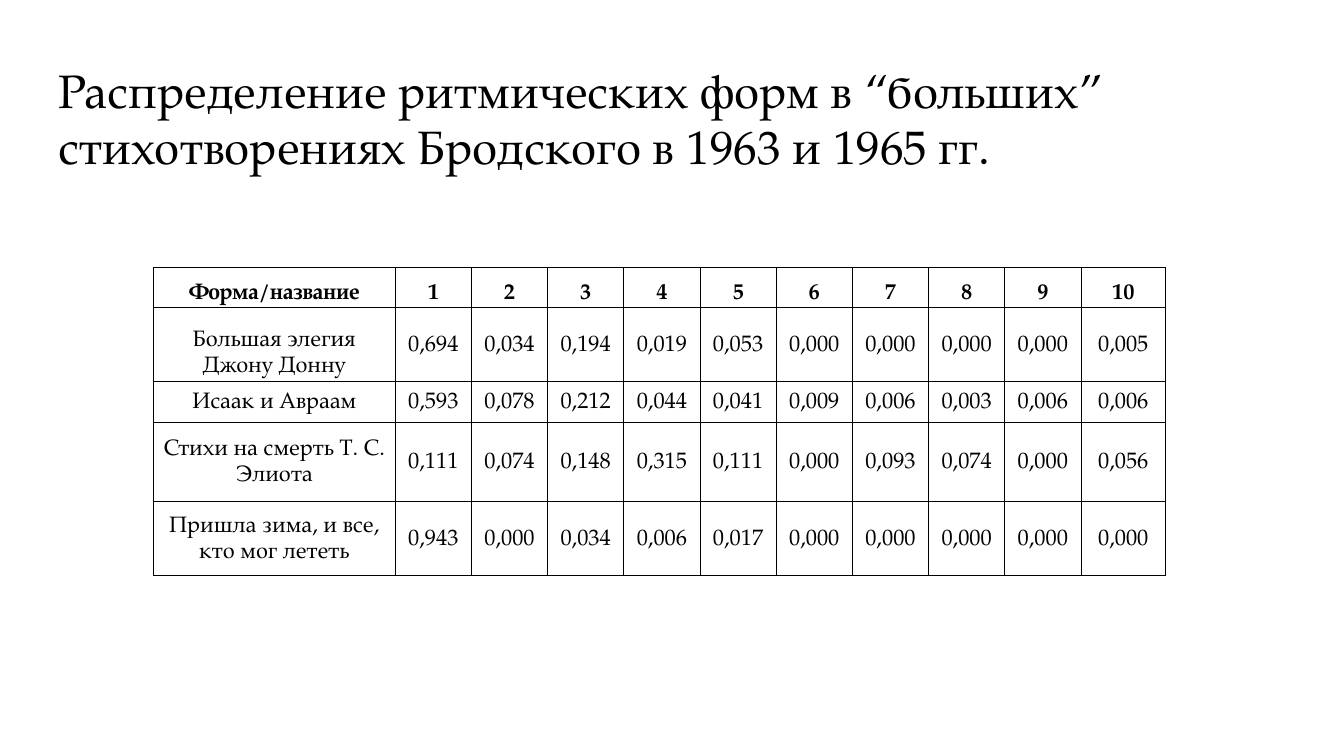
"""Build a slide with a table of rhythmic form frequencies in long poems."""
from dataclasses import dataclass

import lxml.etree
import pptx
import pptx.dml.color
import pptx.enum.text
import pptx.oxml.ns
import pptx.slide
import pptx.table
import pptx.text.text
import pptx.util
from pptx.enum.text import MSO_ANCHOR, PP_ALIGN
from pptx.util import Cm, Pt

BLACK = pptx.dml.color.RGBColor(0, 0, 0)
FONT = "TeX Gyre Pagella"
TITLE = "Распределение ритмических форм в “больших” стихотворениях Бродского в 1963 и 1965 гг."
COLUMN_WIDTHS = [4.57] + [1.44] * 9 + [1.6]


@dataclass(frozen=True)
class TableRow:
    label: str
    values: str
    height: float
    label_anchor: MSO_ANCHOR = MSO_ANCHOR.MIDDLE
    value_anchor: MSO_ANCHOR = MSO_ANCHOR.MIDDLE
    bold: bool = False


ROWS = [
    TableRow("Форма/название", "1 2 3 4 5 6 7 8 9 10", 0.76,
             MSO_ANCHOR.BOTTOM, MSO_ANCHOR.BOTTOM, True),
    TableRow("Большая элегия Джону Донну",
             "0,694 0,034 0,194 0,019 0,053 0,000 0,000 0,000 0,000 0,005", 1.4,
             MSO_ANCHOR.BOTTOM),
    TableRow("Исаак и Авраам",
             "0,593 0,078 0,212 0,044 0,041 0,009 0,006 0,003 0,006 0,006", 0.76),
    TableRow("Стихи на смерть Т. С. Элиота",
             "0,111 0,074 0,148 0,315 0,111 0,000 0,093 0,074 0,000 0,056", 1.5),
    TableRow("Пришла зима, и все, кто мог лететь",
             "0,943 0,000 0,034 0,006 0,017 0,000 0,000 0,000 0,000 0,000", 1.4),
]


def add_run(paragraph: pptx.text.text._Paragraph, text: str, size: float,
            bold: bool = False) -> None:
    run = paragraph.add_run()
    run.text = text
    run.font.name = FONT
    run.font.size = Pt(size)
    run.font.bold = bold
    run.font.color.rgb = BLACK


def add_borders(cell: pptx.table._Cell) -> None:
    properties = cell._tc.get_or_add_tcPr()
    for position, side in enumerate(("lnL", "lnR", "lnT", "lnB")):
        line = lxml.etree.Element(pptx.oxml.ns.qn(f"a:{side}"), w=str(Pt(0.6)))
        fill = lxml.etree.SubElement(line, pptx.oxml.ns.qn("a:solidFill"))
        lxml.etree.SubElement(fill, pptx.oxml.ns.qn("a:srgbClr"), val=str(BLACK))
        properties.insert(position, line)


def fill_cell(cell: pptx.table._Cell, text: str, anchor: MSO_ANCHOR, bold: bool) -> None:
    cell.fill.background()
    add_borders(cell)
    cell.vertical_anchor = anchor
    cell.margin_left = cell.margin_right = Cm(0.08)
    cell.margin_top = cell.margin_bottom = Cm(0.05)
    paragraph = cell.text_frame.paragraphs[0]
    paragraph.alignment = PP_ALIGN.CENTER
    paragraph.line_spacing = 1.15
    add_run(paragraph, text, 12, bold)


def add_title(slide: pptx.slide.Slide) -> None:
    title = slide.shapes.title
    title.left, title.top, title.width, title.height = Cm(0.86), Cm(0.91), Cm(23.67), Cm(2.62)
    frame = title.text_frame
    frame.word_wrap = True
    frame.auto_size = pptx.enum.text.MSO_AUTO_SIZE.NONE
    frame.vertical_anchor = MSO_ANCHOR.TOP
    frame.margin_left = frame.margin_right = Cm(0.25)
    frame.margin_top = frame.margin_bottom = Cm(0.25)
    paragraph = frame.paragraphs[0]
    paragraph.alignment = PP_ALIGN.LEFT
    add_run(paragraph, TITLE, 25.2)


def add_frequency_table(slide: pptx.slide.Slide) -> None:
    width = Cm(sum(COLUMN_WIDTHS))
    height = Cm(sum(row.height for row in ROWS))
    table = slide.shapes.add_table(
        len(ROWS), len(COLUMN_WIDTHS), Cm(2.9), Cm(5.06), width, height).table
    table.first_row = False
    table.horz_banding = False
    for column, column_width in zip(table.columns, COLUMN_WIDTHS):
        column.width = Cm(column_width)
    for table_row, row in zip(table.rows, ROWS):
        table_row.height = Cm(row.height)
        label_cell, *value_cells = table_row.cells
        fill_cell(label_cell, row.label, row.label_anchor, row.bold)
        for cell, value in zip(value_cells, row.values.split()):
            fill_cell(cell, value, row.value_anchor, row.bold)


def main() -> None:
    presentation = pptx.Presentation()
    presentation.slide_width = Cm(25.4)
    presentation.slide_height = Cm(14.29)
    slide = presentation.slides.add_slide(presentation.slide_layouts[5])
    add_title(slide)
    add_frequency_table(slide)
    presentation.save("out.pptx")


if __name__ == "__main__":
    main()
